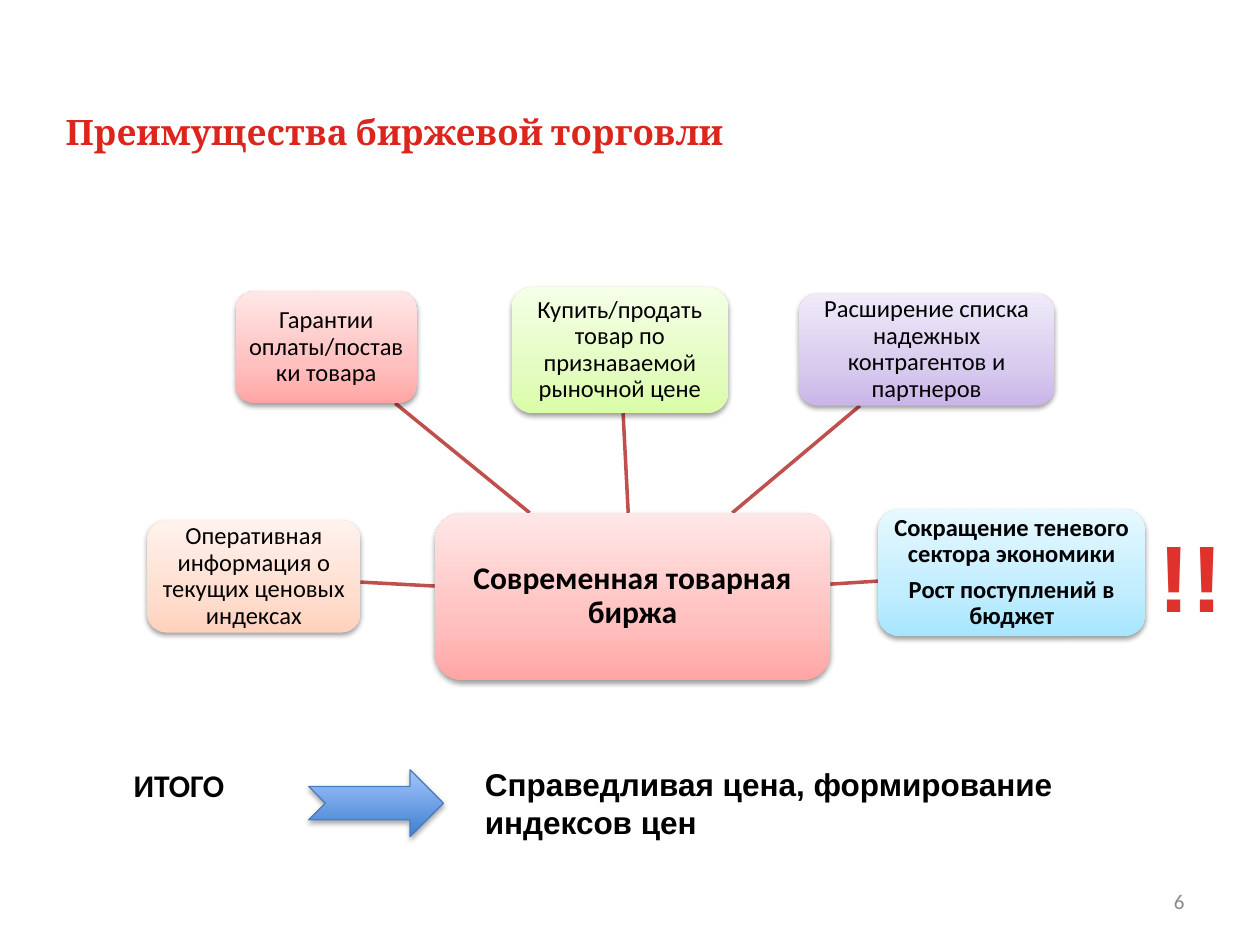
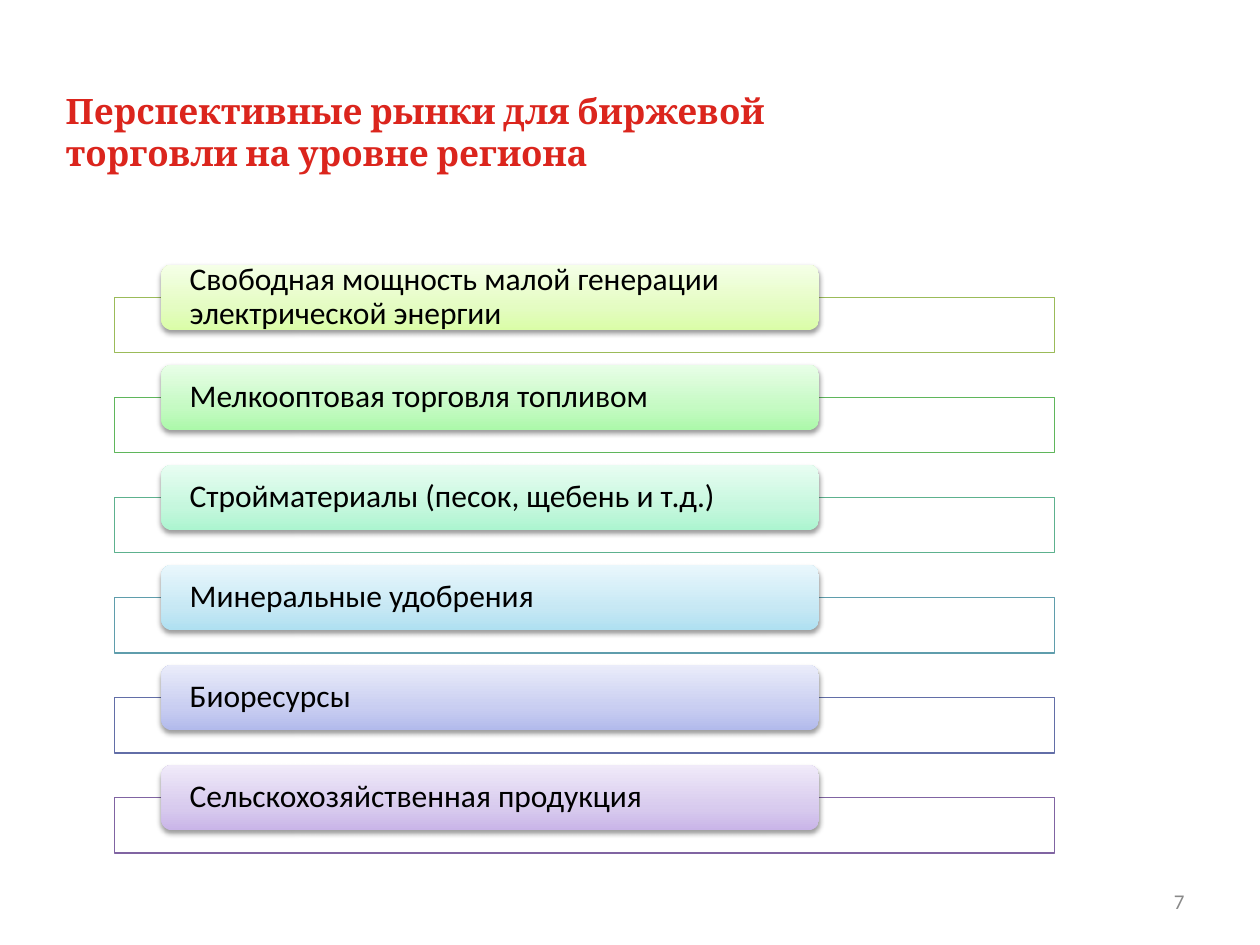
"""Build two slides on exchange trading: its benefits and its markets."""
from copy import deepcopy
from dataclasses import dataclass

from lxml.etree import SubElement as Sub
from pptx import Presentation
from pptx.dml.color import RGBColor as Rgb
from pptx.enum.shapes import MSO_CONNECTOR as Link, MSO_SHAPE as Form
from pptx.enum.text import MSO_ANCHOR as Anchor, MSO_AUTO_SIZE as Auto, PP_ALIGN as Align
from pptx.oxml.ns import qn
from pptx.util import Inches, Pt


@dataclass(frozen=True)
class Theme:
    head: str = "Cambria"
    body: str = "Calibri"
    sans: str = "Arial"
    red: str = "DB251D"
    ink: str = "000000"
    gray: str = "898989"
    white: str = "FFFFFF"
    spoke: str = "C0504D"
    edge: str = "4B7EBC"
    title: int = 20
    large: int = 18
    small: int = 14
    note: int = 12
    mark: int = 54
    rose: tuple = ((0, "FFA6A5"), (35, "FFC0BF"), (100, "FFE7E7"))
    lime: tuple = ((0, "DAFDA7"), (35, "E4FCC2"), (100, "F5FFE7"))
    green: tuple = ((0, "ACF9AA"), (35, "C5FAC3"), (100, "E8FEE7"))
    mint: tuple = ((0, "ACF5D0"), (35, "C5F7DD"), (100, "E8FDF2"))
    aqua: tuple = ((0, "AFE0F1"), (35, "C7E8F4"), (100, "E9F7FC"))
    blue: tuple = ((0, "B2BAEC"), (35, "C9CEF1"), (100, "EAECFA"))
    lilac: tuple = ((0, "C9B5E8"), (35, "D8CBEE"), (100, "F0EAF9"))
    sky: tuple = ((0, "A7E6FF"), (35, "C1EDFF"), (100, "E7F8FF"))
    peach: tuple = ((0, "FFD2BD"), (35, "FFDED0"), (100, "FFF2ED"))
    arrow: tuple = ((0, "3F80CE"), (100, "A4C4FF"))
    alarm: tuple = ((25, "E0322D"), (100, "A2201C"))


@dataclass(frozen=True)
class Box:
    x: float
    y: float
    w: float
    h: float

    def place(self) -> tuple:
        return tuple(Inches(v) for v in (self.x, self.y, self.w, self.h))

    def mid(self) -> tuple:
        return self.x + self.w / 2, self.y + self.h / 2

    def rim(self, goal: tuple) -> tuple:
        """Return the point where the ray from the centre to goal leaves the box."""
        x, y = self.mid()
        dx, dy = goal[0] - x, goal[1] - y
        part = 1 / max(2 * abs(dx) / self.w, 2 * abs(dy) / self.h)
        return x + dx * part, y + dy * part


@dataclass(frozen=True)
class Card:
    box: Box
    text: str
    tones: tuple
    size: int
    bold: bool = False


@dataclass(frozen=True)
class Row:
    text: str
    tones: tuple
    edge: str


T = Theme()
HUB = Card(Box(3.45, 4.07, 3.14, 1.33), "Современная товарная биржа", T.rose, T.large, True)
NODES = (
    Card(Box(4.06, 2.28, 1.72, 1), "Купить/продать товар по признаваемой рыночной цене", T.lime, T.small),
    Card(Box(6.34, 2.33, 2.03, 0.89), "Расширение списка надежных контрагентов и партнеров", T.lilac, T.small),
    Card(Box(6.97, 4.04, 2.12, 1.01), "Сокращение теневого сектора экономики\nРост поступлений в бюджет",
         T.sky, T.small, True),
    Card(Box(1.17, 4.13, 1.69, 0.89), "Оперативная информация о текущих ценовых индексах", T.peach, T.small),
    Card(Box(1.87, 2.31, 1.44, 0.89), "Гарантии оплаты/поставки товара", T.rose, T.small),
)
ROWS = (
    Row("Свободная мощность малой генерации электрической энергии", T.lime, "9BBB59"),
    Row("Мелкооптовая торговля топливом", T.green, "5FB65B"),
    Row("Стройматериалы (песок, щебень и т.д.)", T.mint, "5DB18E"),
    Row("Минеральные удобрения", T.aqua, "5F9DAC"),
    Row("Биоресурсы", T.blue, "626EA7"),
    Row("Сельскохозяйственная продукция", T.lilac, "8064A2"),
)


def blend(owner, stops: tuple, angle: int) -> None:
    """Swap the empty fill of a shape or run for a gradient."""
    grad = owner.makeelement(qn("a:gradFill"), {"rotWithShape": "1"})
    items = Sub(grad, qn("a:gsLst"))
    for spot, tone in stops:
        stop = Sub(items, qn("a:gs"), pos=str(spot * 1000))
        Sub(stop, qn("a:srgbClr"), val=tone)
    Sub(grad, qn("a:lin"), ang=str(angle * 60000), scaled="0")
    owner.replace(owner.find(qn("a:noFill")), grad)


def shade(shape, alpha: int, dist: float) -> None:
    """Cast a soft shadow straight down."""
    glow = Sub(shape._element.spPr.find(qn("a:effectLst")), qn("a:outerShdw"), blurRad=str(Pt(3.1)),
               dist=str(Pt(dist)), dir="5400000", rotWithShape="0")
    tone = Sub(glow, qn("a:srgbClr"), val=T.ink)
    Sub(tone, qn("a:alpha"), val=str(alpha * 1000))


def write(shape, text: str, *, size: int, font: str = T.body, color: str = T.ink, bold: bool = False,
          align=Align.LEFT, anchor=Anchor.MIDDLE, pad: tuple = (0.1, 0.05), lead: float = 1.0,
          after: int = 0, wrap: bool = True, plain: bool = False, stops: tuple = ()) -> None:
    """Fill a shape with formatted text, one paragraph a line."""
    frame = shape.text_frame
    frame.auto_size, frame.word_wrap, frame.vertical_anchor = Auto.NONE, wrap, anchor
    frame.margin_left = frame.margin_right = Inches(pad[0])
    frame.margin_top = frame.margin_bottom = Inches(pad[1])
    for i, line in enumerate(text.split("\n")):
        para = frame.add_paragraph() if i else frame.paragraphs[0]
        para.text = line
        if plain:
            props = para._p.get_or_add_pPr()
            props.set("marL", "0")
            props.set("indent", "0")
            Sub(props, qn("a:buNone"))
        para.alignment, para.line_spacing = align, lead
        para.space_before, para.space_after = Pt(0), Pt(after)
        for run in para.runs:
            run.font.name, run.font.size, run.font.bold = font, Pt(size), bold
            if stops:
                run.font.fill.background()
                blend(run._r.get_or_add_rPr(), stops, 90)
                run._r.rPr.set("spc", "50")
            else:
                run.font.color.rgb = Rgb.from_string(color)
        for gap in para._p.findall(qn("a:br")):
            gap.append(deepcopy(para.runs[0]._r.rPr))


def draw(slide, form, box: Box, *, fill: str = T.white, stops: tuple = (), edge: str = ""):
    """Add a preset shape with a plain or gradient fill."""
    shape = slide.shapes.add_shape(form, *box.place())
    shape.shadow.inherit = False
    if stops:
        shape.fill.background()
        blend(shape._element.spPr, stops, 270)
    else:
        shape.fill.solid()
        shape.fill.fore_color.rgb = Rgb.from_string(fill)
    if edge:
        shape.line.color.rgb = Rgb.from_string(edge)
        shape.line.width = Pt(0.75)
    else:
        shape.line.fill.background()
    return shape


def label(slide, box: Box, text: str, **style) -> None:
    """Add a text box."""
    write(slide.shapes.add_textbox(*box.place()), text, **style)


def move(shape, box: Box) -> None:
    """Put a placeholder in its place."""
    shape.left, shape.top, shape.width, shape.height = box.place()


def start(deck, layout: int, title: str, number: int):
    """Add a slide with its title and number."""
    slide = deck.slides.add_slide(deck.slide_layouts[layout])
    move(slide.shapes.title, Box(0.42, 0.42, 9, 1.25))
    write(slide.shapes.title, title, size=T.title, font=T.head, color=T.red, bold=True)
    label(slide, Box(7.17, 6.95, 2.33, 0.4), str(number), size=T.note, color=T.gray, align=Align.RIGHT)
    return slide


def spoke(slide, hub: Box, node: Box) -> None:
    """Draw a line between two boxes along their centres."""
    ends = (*hub.rim(node.mid()), *node.rim(hub.mid()))
    line = slide.shapes.add_connector(Link.STRAIGHT, *(Inches(v) for v in ends))
    line.line.color.rgb = Rgb.from_string(T.spoke)
    line.line.width = Pt(2)
    Sub(line._element.spPr, qn("a:effectLst"))


def tile(slide, card: Card, **style) -> None:
    """Draw a rounded card with its text."""
    shape = draw(slide, Form.ROUNDED_RECTANGLE, card.box, stops=card.tones)
    shade(shape, 38, 1.6)
    write(shape, card.text, size=card.size, bold=card.bold, lead=0.9, **style)


def gains(deck) -> None:
    """Build the slide of trading benefits."""
    slide = start(deck, 1, "Преимущества биржевой торговли", 6)
    total = slide.placeholders[1]
    move(total, Box(0.96, 6.03, 1.3, 0.4))
    write(total, "ИТОГО", size=T.large, bold=True, plain=True)
    for node in NODES:
        spoke(slide, HUB.box, node.box)
    for card in (HUB, *NODES):
        tile(slide, card, align=Align.CENTER, pad=(0.04, 0.04), after=5)
    label(slide, Box(3.75, 6.02, 5, 0.71), "Справедливая цена, формирование индексов цен",
          size=T.large, font=T.sans, bold=True, anchor=Anchor.TOP)
    arrow = draw(slide, Form.NOTCHED_RIGHT_ARROW, Box(2.45, 6.11, 1.07, 0.53), stops=T.arrow, edge=T.edge)
    shade(arrow, 35, 1.8)
    label(slide, Box(9.09, 4.06, 0.72, 1.01), "!!", size=T.mark, font=T.sans, bold=True,
          align=Align.CENTER, anchor=Anchor.TOP, wrap=False, stops=T.alarm)


def fields(deck) -> None:
    """Build the slide of promising markets."""
    slide = start(deck, 5, "Перспективные рынки для биржевой\vторговли на уровне региона", 7)
    step = 3.97 / (len(ROWS) - 1)
    for i, row in enumerate(ROWS):
        draw(slide, Form.RECTANGLE, Box(0.91, 2.36 + i * step, 7.46, 0.44), edge=row.edge)
        card = Card(Box(1.28, 2.1 + i * step, 5.22, 0.52), row.text, row.tones, T.large)
        tile(slide, card, pad=(0.2, 0))


def main() -> None:
    """Build and save the deck."""
    deck = Presentation()
    deck.slide_width, deck.slide_height = Inches(10), Inches(7.5)
    gains(deck)
    fields(deck)
    deck.save("out.pptx")


if __name__ == "__main__":
    main()
